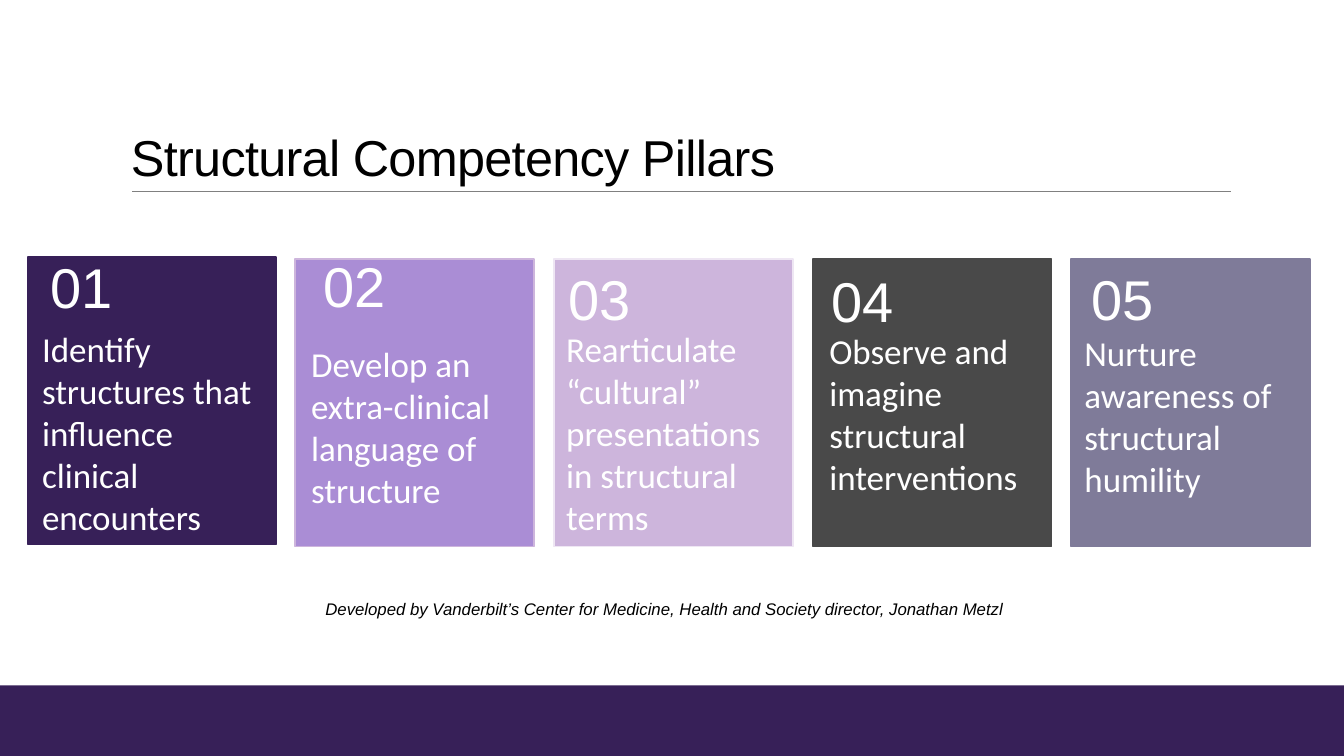
from pptx import Presentation
from pptx.dml.color import RGBColor
from pptx.enum.shapes import MSO_CONNECTOR as Link, MSO_SHAPE as Shape
from pptx.enum.text import MSO_ANCHOR as Anchor
from pptx.oxml.ns import qn
from pptx.util import Cm, Pt

PURPLE, WHITE, BLACK, GREY = "372058", "FFFFFF", "000000", "808080"
WIDTH, HEIGHT = 33.87, 19.05
CARD_W, CARD_H, PITCH = 6.02, 7.24, 6.52

# fill, line, wording, then left and top of the number and of the wording
PILLARS = [
    (PURPLE, PURPLE, "Identify structures that influence clinical encounters",
     (0.69, 6.12), (0.81, 8.13)),
    ("AA8DD5", "CDB5DC", "Develop an extra-clinical language of structure",
     (7.57, 6.08), (7.59, 8.51)),
    ("CDB5DC", "EEE6F3", "Rearticulate “cultural” presentations in structural terms",
     (13.74, 6.16), (14.02, 8.13)),
    ("494949", "494949", "Observe and imagine structural interventions",
     (20.37, 6.23), (20.65, 8.18)),
    ("7F7B99", "7F7B99", "Nurture awareness of structural humility",
     (26.92, 6.18), (27.08, 8.23)),
]


def color(code):
    return RGBColor.from_string(code)


class Deck:
    """Holds the presentation, its fonts and the current slide."""

    head, body = "Arial", "Calibri"

    def __init__(self):
        self.prs = Presentation()
        self.prs.slide_width, self.prs.slide_height = Cm(WIDTH), Cm(HEIGHT)
        self.slide = self.prs.slides.add_slide(self.prs.slide_layouts[6])
        self.shapes = self.slide.shapes

    def rect(self, x, y, w, h, fill, line=None):
        box = self.shapes.add_shape(Shape.RECTANGLE, Cm(x), Cm(y), Cm(w), Cm(h))
        box.shadow.inherit = False
        box.fill.solid()
        box.fill.fore_color.rgb = color(fill)
        if line:
            box.line.color.rgb = color(line)
            box.line.width = Pt(1.25)
        else:
            box.line.fill.background()

    def rule(self, x, y, end):
        line = self.shapes.add_connector(Link.STRAIGHT, Cm(x), Cm(y), Cm(end), Cm(y))
        line.line.color.rgb = color(GREY)
        line.line.width = Pt(0.5)
        props = line._element.spPr
        props.append(props.makeelement(qn("a:effectLst"), {}))

    def text(self, x, y, w, h, words, size, font, ink=WHITE, anchor=Anchor.TOP,
             pad=(0.25, 0.13), lead=None, italic=False, track=None):
        """Add a text box; track is the letter spacing in hundredths of a point."""
        frame = self.shapes.add_textbox(Cm(x), Cm(y), Cm(w), Cm(h)).text_frame
        frame.word_wrap = True
        frame.vertical_anchor = anchor
        frame.margin_left = frame.margin_right = Cm(pad[0])
        frame.margin_top = frame.margin_bottom = Cm(pad[1])
        frame.text = words
        par = frame.paragraphs[0]
        if lead:
            par.line_spacing = lead
        run = par.runs[0]
        run.font.name, run.font.size = font, Pt(size)
        run.font.color.rgb = color(ink)
        if italic:
            run.font.italic = True
        if track:
            run._r.get_or_add_rPr().set("spc", str(track))

    def pillar(self, index, fill, line, words, num_at, words_at):
        first = index == 0
        left = 0.71 if first else 7.44 + (index - 1) * PITCH
        wide = 6.25 if first else CARD_W
        self.rect(left, 6.48 if first else 6.53, wide, CARD_H, fill, line)
        self.text(*num_at, 4.04 if first else CARD_W, 2.4 if index < 2 else 2.9,
                  f"{index + 1:02}", 40, self.head, anchor=Anchor.MIDDLE,
                  pad=(0.58, 0.46), lead=0.9)
        self.text(*words_at, 6.32 if first else 5.66, 5.4, words, 25, self.body)


def main():
    deck = Deck()
    deck.rect(0, 17.27, WIDTH, 1.78, PURPLE)
    deck.rule(3.33, 4.83, 31.01)
    deck.text(3.05, 0.79, 27.94, 4.04, "Structural Competency Pillars", 36, deck.head,
              BLACK, Anchor.BOTTOM, lead=0.85, track=-50)
    for index, pillar in enumerate(PILLARS):
        deck.pillar(index, *pillar)
    deck.text(7.95, 14.96, 17.81, 0.99,
              "Developed by Vanderbilt’s Center for Medicine, Health and Society "
              "director, Jonathan Metzl", 12, deck.head, BLACK, italic=True)
    deck.prs.save("out.pptx")


if __name__ == "__main__":
    main()
